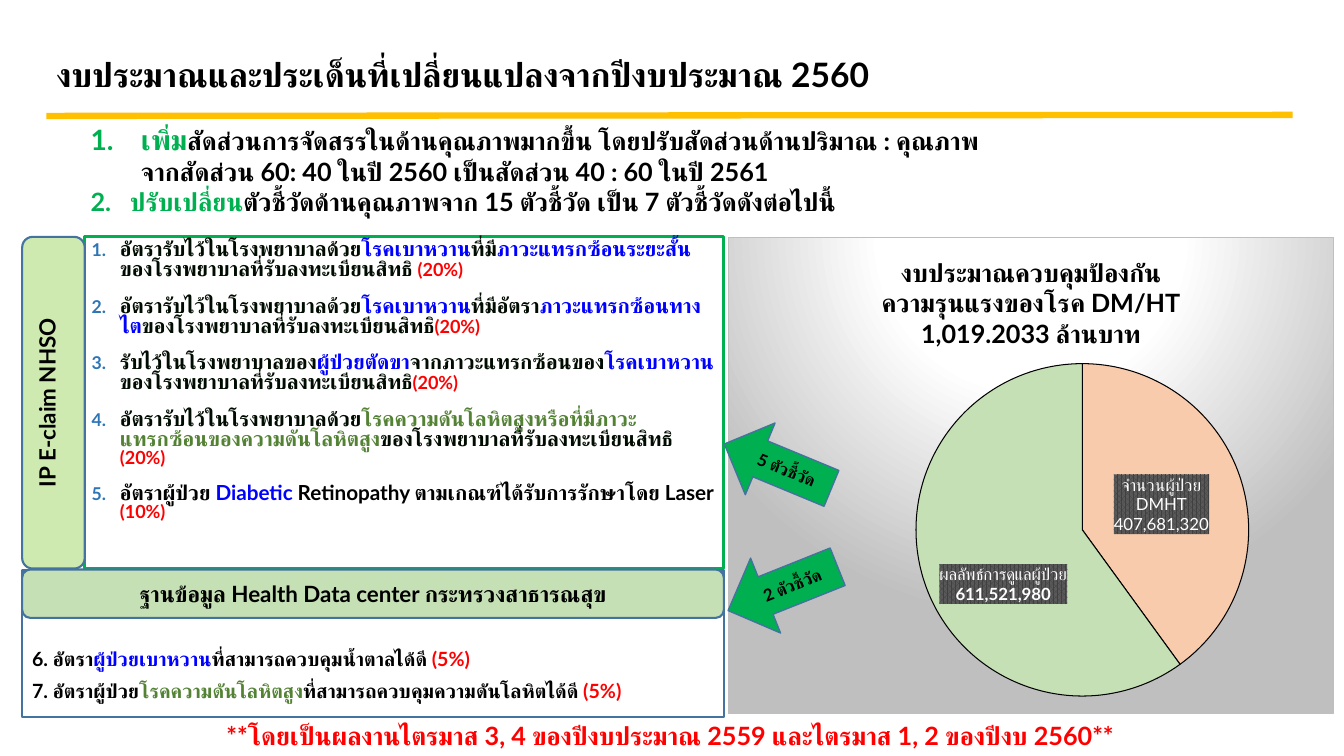
from dataclasses import dataclass
from lxml.etree import SubElement, fromstring
from pptx import Presentation
from pptx.chart.data import CategoryChartData as ChartData
from pptx.dml.color import RGBColor as RGB
from pptx.enum.chart import XL_CHART_TYPE as Chart, XL_LABEL_POSITION as Spot
from pptx.enum.shapes import MSO_CONNECTOR as Link, MSO_SHAPE as Form
from pptx.enum.text import MSO_ANCHOR as Anchor, MSO_AUTO_SIZE as Auto, PP_ALIGN as Align
from pptx.oxml.ns import nsdecls, qn
from pptx.util import Inches, Pt

FONT = "Lato"
HEX = {
    "black": "000000", "ink": "000C01", "blue": "0000FF", "red": "FF0000",
    "olive": "548235", "green": "00B050", "lime": "CEEAB0", "sage": "C5E0B4",
    "peach": "F8CBAD", "edge": "43739E", "mark": "2E75B6", "gold": "FFC000",
    "white": "FFFFFF", "grey": "BFBFBF", "dark": "404040", "dim": "595959",
}


@dataclass
class Run:
    text: str
    tint: str = "black"
    size: float = 18
    bold: bool = True


@dataclass
class Para:
    runs: list[Run]
    hang: float = 0
    left: float = 0
    start: int = 0
    mark: str = ""
    gap: float = 0
    lead: float = 1.0
    align: Align = Align.LEFT


@dataclass
class Box:
    at: tuple[float, float, float, float]
    paras: list[Para]
    form: Form | None = None
    fill: str = ""
    edge: str = "edge"
    width: float = 1.5
    turn: float = 0
    anchor: Anchor = Anchor.MIDDLE
    inset: tuple[float, float] = (0.1, 0.05)
    vert: str = ""


def tint(name: str) -> RGB:
    return RGB.from_string(HEX[name])


def add_run(para, item: Run) -> None:
    run = para.add_run()
    run.text = item.text
    font = run.font
    font.name, font.size, font.bold = FONT, Pt(item.size), item.bold
    font.color.rgb = tint(item.tint)
    SubElement(run._r.get_or_add_rPr(), qn("a:cs"), typeface=FONT)


def write(frame, paras: list[Para]) -> None:
    for i, item in enumerate(paras):
        para = frame.add_paragraph() if i else frame.paragraphs[0]
        props = para._p.get_or_add_pPr()
        props.set("marL", str(Inches(item.hang + item.left)))
        props.set("indent", str(-Inches(item.hang)))
        if item.mark:
            color = SubElement(props, qn("a:buClr"))
            SubElement(color, qn("a:srgbClr"), val=HEX[item.mark])
            SubElement(props, qn("a:buSzPct"), val="85000")
        if item.start:
            SubElement(props, qn("a:buAutoNum"), type="arabicPeriod", startAt=str(item.start))
        para.alignment, para.line_spacing = item.align, item.lead
        para.space_before = Pt(item.gap if i else 0)
        for run in item.runs:
            add_run(para, run)


def draw(slide, box: Box) -> None:
    place = [Inches(n) for n in box.at]
    if box.form is None:
        shape = slide.shapes.add_textbox(*place)
    else:
        shape = slide.shapes.add_shape(box.form, *place)
        shape.shadow.inherit = False
        shape.rotation = box.turn
        shape.line.color.rgb, shape.line.width = tint(box.edge), Pt(box.width)
        if box.fill:
            shape.fill.solid()
            shape.fill.fore_color.rgb = tint(box.fill)
        else:
            shape.fill.background()
    frame = shape.text_frame
    frame.word_wrap = True
    frame.vertical_anchor = box.anchor
    frame.margin_left = frame.margin_right = Inches(box.inset[0])
    frame.margin_top = frame.margin_bottom = Inches(box.inset[1])
    if box.vert:
        frame._txBody.bodyPr.set("vert", box.vert)
    write(frame, box.paras)


def center(text: str, size: float, color: str = "black", bold: bool = True) -> Para:
    return Para([Run(text, color, size, bold)], align=Align.CENTER)


def layout(**parts: float | str):
    nodes = "".join(f'<c:{key} val="{val}"/>' for key, val in parts.items())
    return fromstring(f'<c:layout {nsdecls("c")}><c:manualLayout>{nodes}</c:manualLayout></c:layout>')


def draw_pie(slide) -> None:
    data = ChartData()
    data.categories = ["จำนวนผู้ป่วย DMHT", "ผลลัพธ์การดูแลผู้ป่วย"]
    data.add_series("Series 1", (40, 60))
    place = [Inches(n) for n in (7.22, 2.35, 6.01, 4.73)]
    chart = slide.shapes.add_chart(Chart.PIE, *place, data).chart
    chart.has_legend = False
    chart.font.name, chart.font.size = FONT, Pt(10)
    chart.font.color.rgb = tint("black")
    chart.has_title = True
    heads = ("งบประมาณควบคุมป้องกัน", "ความรุนแรงของโรค DM/HT", "1,019.2033 ล้านบาท")
    write(chart.chart_title.text_frame, [center(head, 18) for head in heads])
    chart.chart_title.include_in_layout = False

    stops = "".join(f'<a:gs pos="{pos}000"><a:srgbClr val="{HEX[name]}"/></a:gs>'
                    for pos, name in ((0, "white"), (39, "white"), (100, "grey")))
    back = fromstring(
        f'<c:spPr {nsdecls("c", "a")}><a:gradFill><a:gsLst>{stops}</a:gsLst>'
        '<a:path path="circle"><a:fillToRect l="50000" t="-80000" r="50000" b="180000"/></a:path>'
        f'</a:gradFill><a:ln w="9525"><a:solidFill><a:srgbClr val="{HEX["grey"]}"/></a:solidFill></a:ln></c:spPr>')
    root = chart._chartSpace
    root.find(qn("c:chart")).addnext(back)
    area = root.find(qn("c:chart")).find(qn("c:plotArea"))
    for old in area.findall(qn("c:layout")):
        area.remove(old)
    area.insert(0, layout(layoutTarget="inner", xMode="edge", yMode="edge", x=0.31, y=0.26, w=0.55, h=0.71))

    plot = chart.plots[0]
    plot.vary_by_categories = True
    tags = (("peach", "จำนวนผู้ป่วย DMHT", "407,681,320", False, 0),
            ("sage", "ผลลัพธ์การดูแลผู้ป่วย", "611,521,980", True, 0.06))
    for i, (color, name, total, bold, drop) in enumerate(tags):
        point = plot.series[0].points[i]
        point.format.fill.solid()
        point.format.fill.fore_color.rgb = tint(color)
        point.format.line.color.rgb = tint("black")
        point.format.line.width = Pt(0.75)
        label = point.data_label
        label.text_frame.word_wrap = True
        write(label.text_frame, [center(name, 12, "white", False), center(total, 12, "white", bold)])
        label.position = Spot.CENTER
        text = label._get_or_add_dLbl().find(qn("c:tx"))
        text.addnext(fromstring(
            f'<c:spPr {nsdecls("c", "a")}><a:pattFill prst="pct75">'
            f'<a:fgClr><a:srgbClr val="{HEX["dark"]}"/></a:fgClr>'
            f'<a:bgClr><a:srgbClr val="{HEX["dim"]}"/></a:bgClr></a:pattFill></c:spPr>'))
        if drop:
            text.addprevious(layout(x=0, y=drop))


def rate(num: int, share: str, *parts: tuple[str, str]) -> Para:
    runs = [Run(text, color, 14.8) for text, color in parts]
    return Para(runs + [Run(share, "red", 12.9)], 0.28, start=num, mark="mark", gap=12, lead=0.8)


def goal(head: str, group: str, color: str, tail: str) -> Para:
    parts = ((head, "black"), (group, color), (tail, "black"), ("(5%)", "red"))
    return Para([Run(text, shade, 14) for text, shade in parts], gap=6)


def main() -> None:
    deck = Presentation()
    deck.slide_width, deck.slide_height = Inches(13.33), Inches(7.5)
    slide = deck.slides.add_slide(deck.slide_layouts[5])

    title = slide.shapes.title
    title.left, title.top, title.width, title.height = (Inches(n) for n in (0.46, 0.39, 10.95, 0.73))
    title.text_frame.auto_size = Auto.NONE
    title.text_frame.vertical_anchor = Anchor.MIDDLE
    write(title.text_frame, [Para([Run("งบประมาณและประเด็นที่เปลี่ยนแปลงจากปีงบประมาณ 2560", size=24)], lead=0.9)])

    rule = slide.shapes.add_connector(Link.STRAIGHT, *(Inches(n) for n in (0.46, 1.15, 12.82, 1.14)))
    rule.line.color.rgb, rule.line.width = tint("gold"), Pt(4.5)
    SubElement(rule._element.spPr, qn("a:effectLst"))

    stay, sugar, clinic = "อัตรารับไว้ในโรงพยาบาลด้วย", "โรคเบาหวาน", "ของโรงพยาบาลที่รับลงทะเบียนสิทธิ"
    rates = [
        rate(1, "(20%)", (stay, "ink"), (sugar, "blue"), ("ที่มี", "ink"),
             ("ภาวะแทรกซ้อนระยะสั้น", "blue"), (clinic + " ", "ink")),
        rate(2, "(20%)", (stay, "ink"), (sugar, "blue"), ("ที่มีอัตรา", "ink"),
             ("ภาวะแทรกซ้อนทางไต", "blue"), (clinic, "ink")),
        rate(3, "(20%)", ("รับไว้ในโรงพยาบาลของ", "ink"), ("ผู้ป่วยตัดขา", "blue"),
             ("จากภาวะแทรกซ้อนของ", "ink"), (sugar, "blue"), (clinic, "ink")),
        rate(4, "(20%)", (stay, "ink"),
             ("โรคความดันโลหิตสูงหรือที่มีภาวะแทรกซ้อนของความดันโลหิตสูง", "olive"), (clinic + " ", "ink")),
        rate(5, "(10%)", ("อัตราผู้ป่วย ", "black"), ("Diabetic", "blue"),
             (" Retinopathy ตามเกณฑ์ได้รับการรักษาโดย Laser ", "black")),
    ]
    goals = [
        goal("6. อัตรา", "ผู้ป่วยเบาหวาน", "blue", "ที่สามารถควบคุมน้ำตาลได้ดี "),
        goal("7. อัตราผู้ป่วย", "โรคความดันโลหิตสูง", "olive", "ที่สามารถควบคุมความดันโลหิตได้ดี "),
    ]
    intro = [
        Para([Run("เพิ่ม", "green", 20),
              Run("สัดส่วนการจัดสรรในด้านคุณภาพมากขึ้น โดยปรับสัดส่วนด้านปริมาณ : คุณภาพ")], 0.5, start=1),
        Para([Run("จากสัดส่วน 60: 40 ในปี 2560 เป็นสัดส่วน 40 : 60 ในปี 2561")], left=0.5),
        Para([Run("ปรับเปลี่ยน", "green"),
              Run("ตัวชี้วัดด้านคุณภาพจาก 15 ตัวชี้วัด เป็น 7 ตัวชี้วัดดังต่อไปนี้")], 0.39, start=2),
    ]
    note = "**โดยเป็นผลงานไตรมาส 3, 4 ของปีงบประมาณ 2559 และไตรมาส 1, 2 ของปีงบ 2560**"
    draw(slide, Box((0.84, 2.35, 6.34, 3.29), rates, Form.RECTANGLE, "", "green", 2.25,
                    anchor=Anchor.TOP, inset=(0.07, 0.04)))
    draw(slide, Box((0.22, 2.35, 0.62, 3.29), [center("IP E-claim NHSO", 16)], Form.ROUNDED_RECTANGLE,
                    "lime", anchor=Anchor.TOP, inset=(0.08, 0.08), vert="vert270"))
    draw_pie(slide)
    for box in (
        Box((7.14, 4.24, 1.15, 0.77), [center("5 ตัวชี้วัด", 12)], Form.LEFT_ARROW, "green", width=1, turn=22.5),
        Box((0.22, 5.66, 6.96, 1.45), goals, Form.RECTANGLE, anchor=Anchor.BOTTOM, inset=(0.1, 0.14)),
        Box((0.22, 5.65, 6.96, 0.48), [center("ฐานข้อมูล Health Data center กระทรวงสาธารณสุข", 16)],
            Form.ROUNDED_RECTANGLE, "sage"),
        Box((7.18, 5.44, 1.17, 0.8), [center("2 ตัวชี้วัด", 12)], Form.LEFT_ARROW, "green", width=1, turn=338.2),
        Box((1.05, 7.1, 11.19, 0.4), [center(note, 18, "red")], anchor=Anchor.TOP),
        Box((0.8, 1.17, 12.19, 1.04), intro, anchor=Anchor.TOP),
    ):
        draw(slide, box)
    deck.save("out.pptx")


if __name__ == "__main__":
    main()
